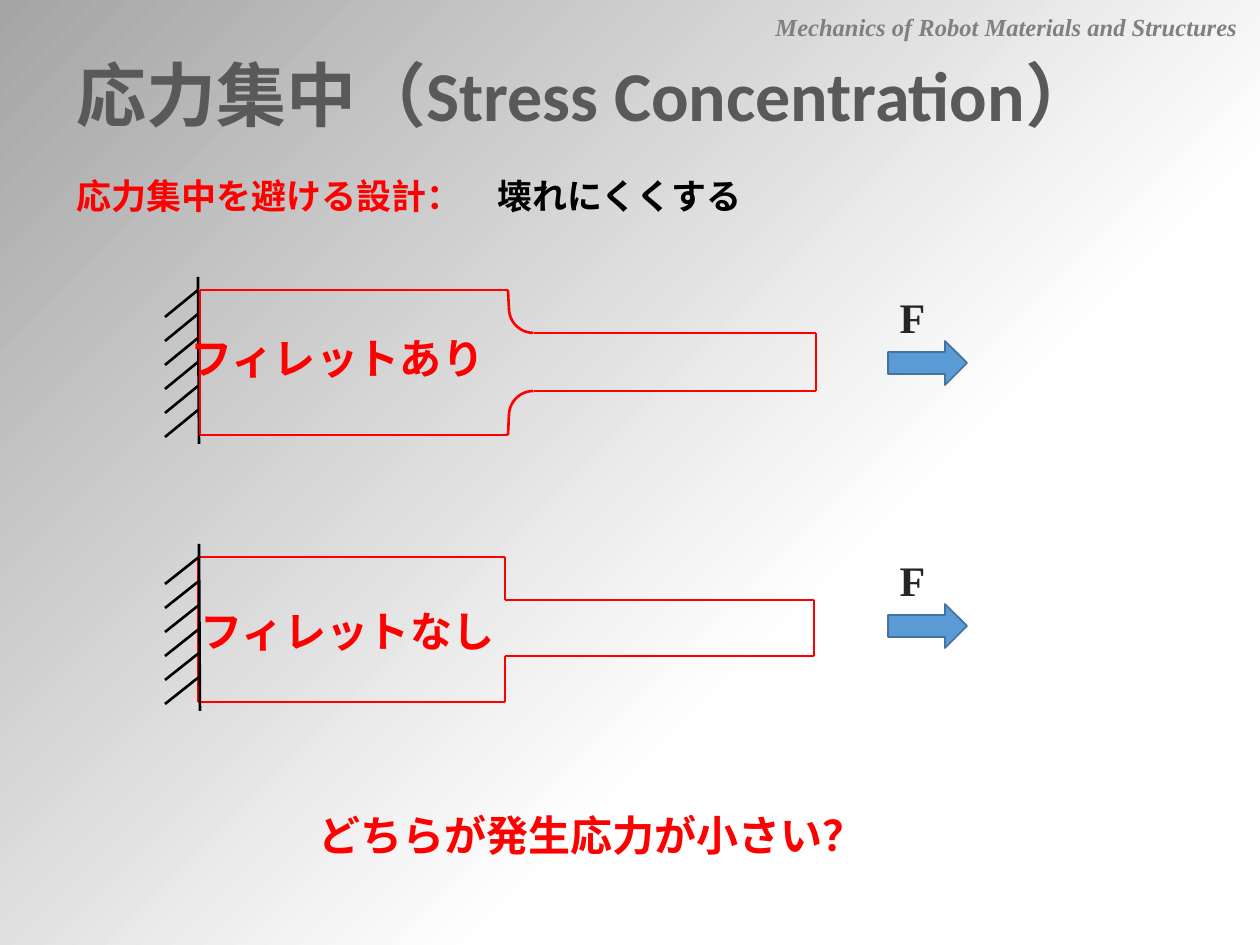
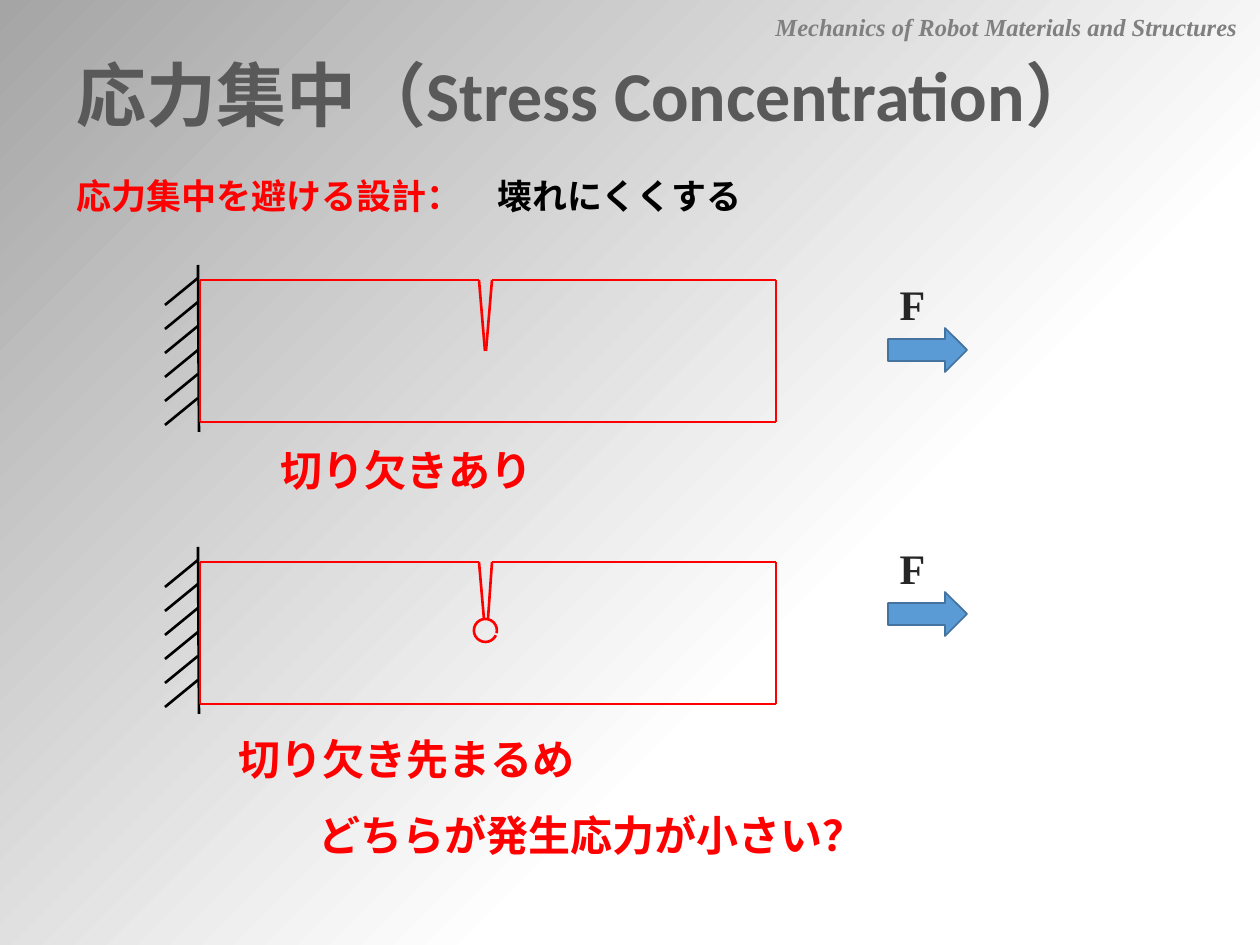
from dataclasses import dataclass
from itertools import pairwise

from lxml import etree
from pptx import Presentation
from pptx.dml.color import RGBColor
from pptx.enum.shapes import MSO_CONNECTOR, MSO_SHAPE
from pptx.enum.text import MSO_ANCHOR, PP_ALIGN
from pptx.oxml import parse_xml
from pptx.oxml.ns import nsdecls, qn
from pptx.shapes.autoshape import Shape
from pptx.slide import Slide
from pptx.util import Emu, Pt

STRAIGHT = MSO_CONNECTOR.STRAIGHT
ARC, RIGHT_ARROW = MSO_SHAPE.ARC, MSO_SHAPE.RIGHT_ARROW
LEFT, CENTER = PP_ALIGN.LEFT, PP_ALIGN.CENTER
TOP, MIDDLE = MSO_ANCHOR.TOP, MSO_ANCHOR.MIDDLE

EMU_PER_PX = 914400 / 126
SLIDE_WIDTH, SLIDE_HEIGHT = 1260, 945
SERIF, SANS = "Times New Roman", "Calibri"
LINE_WIDTH = Pt(1.5)
COLORS = {
    "title": "595959",
    "header": "808080",
    "force": "262626",
    "red": "FF0000",
    "black": "000000",
    "arrow": "5B9BD5",
    "arrow_line": "43739E",
    "white": "FFFFFF",
    "corner": "A5A5A5",
}
Point = tuple[int, int]


@dataclass(frozen=True)
class Box:
    left: int
    top: int
    width: int
    height: int


@dataclass(frozen=True)
class TextStyle:
    size: int
    color: str
    font: str = SERIF
    italic: bool = False
    align: PP_ALIGN = CENTER
    anchor: MSO_ANCHOR = TOP
    line_spacing: float = 1.0


TITLE = TextStyle(40, "title", SANS, align=LEFT, anchor=MIDDLE, line_spacing=0.9)
HEADER = TextStyle(14, "header", italic=True)
TOPIC = TextStyle(20, "red", align=LEFT)
LABEL = TextStyle(24, "red")
FORCE = TextStyle(24, "force")


def px(length: int) -> Emu:
    return Emu(round(length * EMU_PER_PX))


def rgb(name: str) -> RGBColor:
    return RGBColor.from_string(COLORS[name])


def place(box: Box) -> tuple[Emu, Emu, Emu, Emu]:
    return px(box.left), px(box.top), px(box.width), px(box.height)


# Basic parts
def add_text(slide: Slide, box: Box, style: TextStyle, *parts: tuple[str, str]) -> None:
    """Write one paragraph; each part is a text and its colour name."""
    frame = slide.shapes.add_textbox(*place(box)).text_frame
    frame.word_wrap = True
    frame.vertical_anchor = style.anchor
    paragraph = frame.paragraphs[0]
    paragraph.alignment = style.align
    paragraph.line_spacing = style.line_spacing
    font = paragraph.font
    font.name, font.size = style.font, Pt(style.size)
    font.bold, font.italic = True, style.italic
    for text, color in parts:
        run = paragraph.add_run()
        run.text = text
        run.font.color.rgb = rgb(color)


def add_label(slide: Slide, box: Box, style: TextStyle, text: str) -> None:
    add_text(slide, box, style, (text, style.color))


def add_lines(slide: Slide, color: str, *points: Point) -> None:
    """Join consecutive points with straight lines."""
    for start, end in pairwise(points):
        connector = slide.shapes.add_connector(
            STRAIGHT, px(start[0]), px(start[1]), px(end[0]), px(end[1]))
        connector.line.color.rgb = rgb(color)
        connector.line.width = LINE_WIDTH
        etree.SubElement(connector._element.spPr, qn("a:effectLst"))


def add_arc(slide: Slide, box: Box, flip_vertical: bool = False) -> Shape:
    arc = slide.shapes.add_shape(ARC, *place(box))
    arc.shadow.inherit = False
    arc.fill.background()
    arc.line.color.rgb = rgb("red")
    arc.line.width = LINE_WIDTH
    transform = arc._element.spPr.find(qn("a:xfrm"))
    transform.set("flipH", "1")
    if flip_vertical:
        transform.set("flipV", "1")
    return arc


# Shared parts of the diagrams
def add_wall(slide: Slide, x: int, top: int) -> None:
    add_lines(slide, "black", (x, top), (x + 1, top + 167))
    for row in range(6):
        y = top + 13 + 24 * row
        add_lines(slide, "black", (x, y), (165, y + 27))


def add_force(slide: Slide, top: int) -> None:
    arrow = slide.shapes.add_shape(RIGHT_ARROW, *place(Box(888, top, 79, 44)))
    arrow.shadow.inherit = False
    arrow.fill.solid()
    arrow.fill.fore_color.rgb = rgb("arrow")
    arrow.line.color.rgb = rgb("arrow_line")
    arrow.line.width = Pt(1)
    add_label(slide, Box(868, top - 56, 89, 63), FORCE, "F")


def add_specimen_label(slide: Slide, left: int, top: int, text: str) -> None:
    add_label(slide, Box(left, top, 367, 63), LABEL, text)


# Specimens
def add_filleted_bar(slide: Slide) -> None:
    add_lines(slide, "red", (509, 309), (508, 290), (200, 290),
              (200, 435), (508, 435), (509, 415))
    add_lines(slide, "red", (534, 333), (816, 333), (816, 391), (534, 391))
    add_arc(slide, Box(509, 284, 49, 49), flip_vertical=True)
    add_arc(slide, Box(509, 391, 49, 49))


def add_stepped_bar(slide: Slide) -> None:
    add_lines(slide, "red", (198, 557), (505, 557), (505, 600), (814, 600),
              (814, 656), (505, 656), (505, 702), (198, 702), (198, 557))


def add_notched_bar(slide: Slide, top: int, depth: int, tip_left: int, tip_right: int) -> None:
    bottom, tip = top + 142, top + depth
    add_lines(slide, "red", (tip_left, tip), (479, top), (200, top), (200, bottom),
              (776, bottom), (776, top), (492, top), (tip_right, tip))


# Slide frame
def set_background(slide: Slide) -> None:
    slide.background.fill.gradient()
    gradient = slide.element.find(".//" + qn("a:gradFill"))
    gradient.getparent().replace(gradient, parse_xml(
        f'<a:gradFill {nsdecls("a")} rotWithShape="1"><a:gsLst>'
        f'<a:gs pos="0"><a:srgbClr val="{COLORS["white"]}"><a:alpha val="70000"/></a:srgbClr></a:gs>'
        f'<a:gs pos="35000"><a:srgbClr val="{COLORS["white"]}"/></a:gs>'
        f'<a:gs pos="100000"><a:srgbClr val="{COLORS["corner"]}"/></a:gs></a:gsLst>'
        '<a:path path="circle"><a:fillToRect l="100000" t="100000"/></a:path></a:gradFill>'))


def add_frame_slide(presentation: Presentation) -> Slide:
    slide = presentation.slides.add_slide(presentation.slide_layouts[6])
    set_background(slide)
    add_label(slide, Box(64, 53, 1171, 91), TITLE, "応力集中（Stress Concentration）")
    add_label(slide, Box(758, 6, 497, 43), HEADER,
              "Mechanics of Robot Materials and Structures")
    add_text(slide, Box(64, 168, 1002, 55), TOPIC,
             ("応力集中を避ける設計：　", "red"), ("壊れにくくする", "black"))
    add_label(slide, Box(165, 803, 853, 63), LABEL, "どちらが発生応力が小さい？")
    return slide


def build_fillet_slide(presentation: Presentation) -> None:
    slide = add_frame_slide(presentation)
    add_wall(slide, 198, 277)
    add_stepped_bar(slide)
    add_filleted_bar(slide)
    add_wall(slide, 199, 544)
    add_specimen_label(slide, 154, 326, "フィレットあり")
    add_specimen_label(slide, 164, 599, "フィレットなし")
    add_force(slide, 341)
    add_force(slide, 604)


def build_notch_slide(presentation: Presentation) -> None:
    slide = add_frame_slide(presentation)
    # Sharp notch
    add_wall(slide, 198, 265)
    add_notched_bar(slide, 280, 71, 485, 486)
    add_specimen_label(slide, 223, 438, "切り欠きあり")
    add_force(slide, 328)
    # Notch with a rounded tip
    add_wall(slide, 198, 547)
    add_notched_bar(slide, 562, 57, 484, 488)
    round_tip = add_arc(slide, Box(474, 619, 23, 23))
    round_tip.adjustments[0] = 99.39
    round_tip.adjustments[1] = 93.23
    add_specimen_label(slide, 223, 727, "切り欠き先まるめ")
    add_force(slide, 592)


def main() -> None:
    presentation = Presentation()
    presentation.slide_width = px(SLIDE_WIDTH)
    presentation.slide_height = px(SLIDE_HEIGHT)
    build_fillet_slide(presentation)
    build_notch_slide(presentation)
    presentation.save("out.pptx")


if __name__ == "__main__":
    main()
